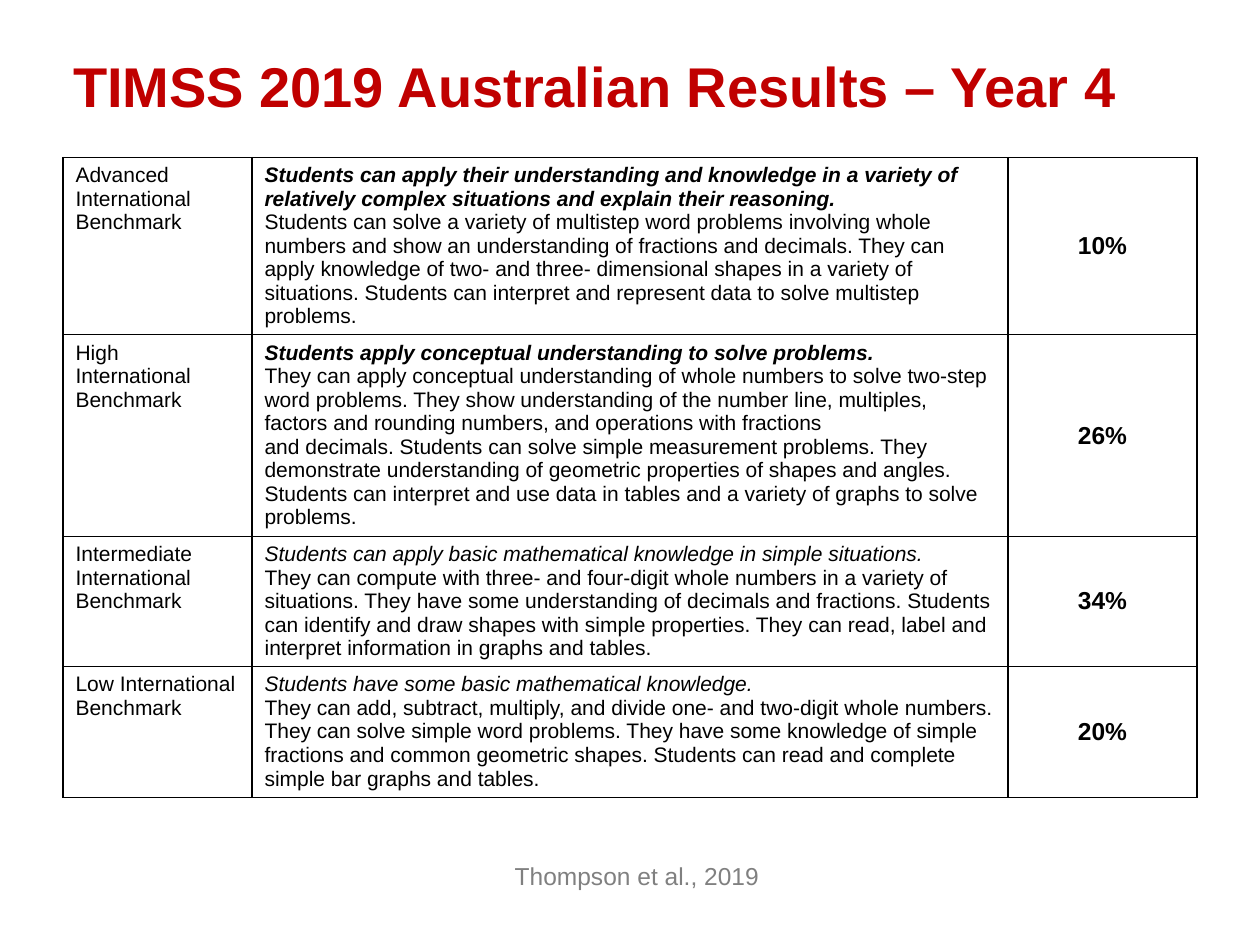
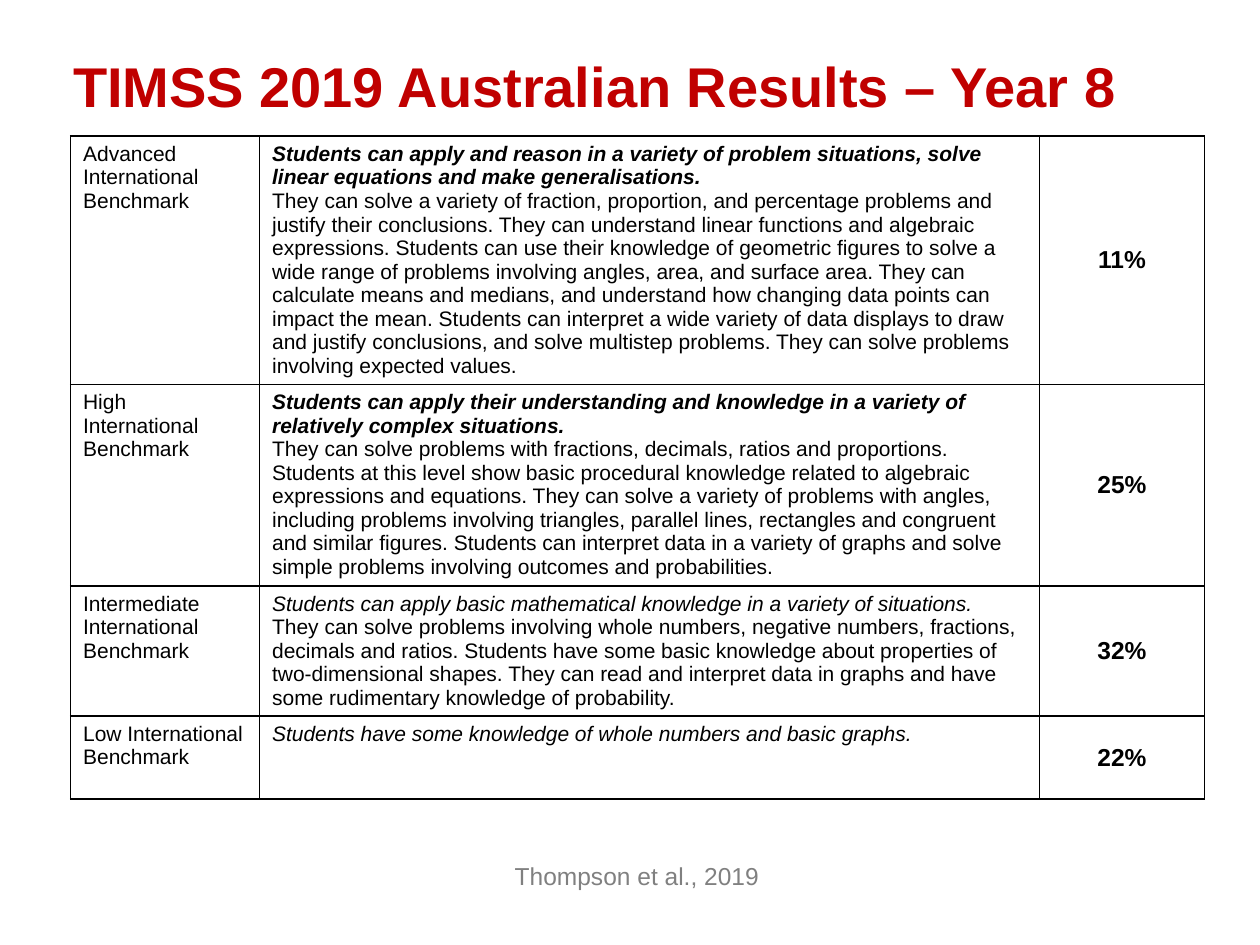
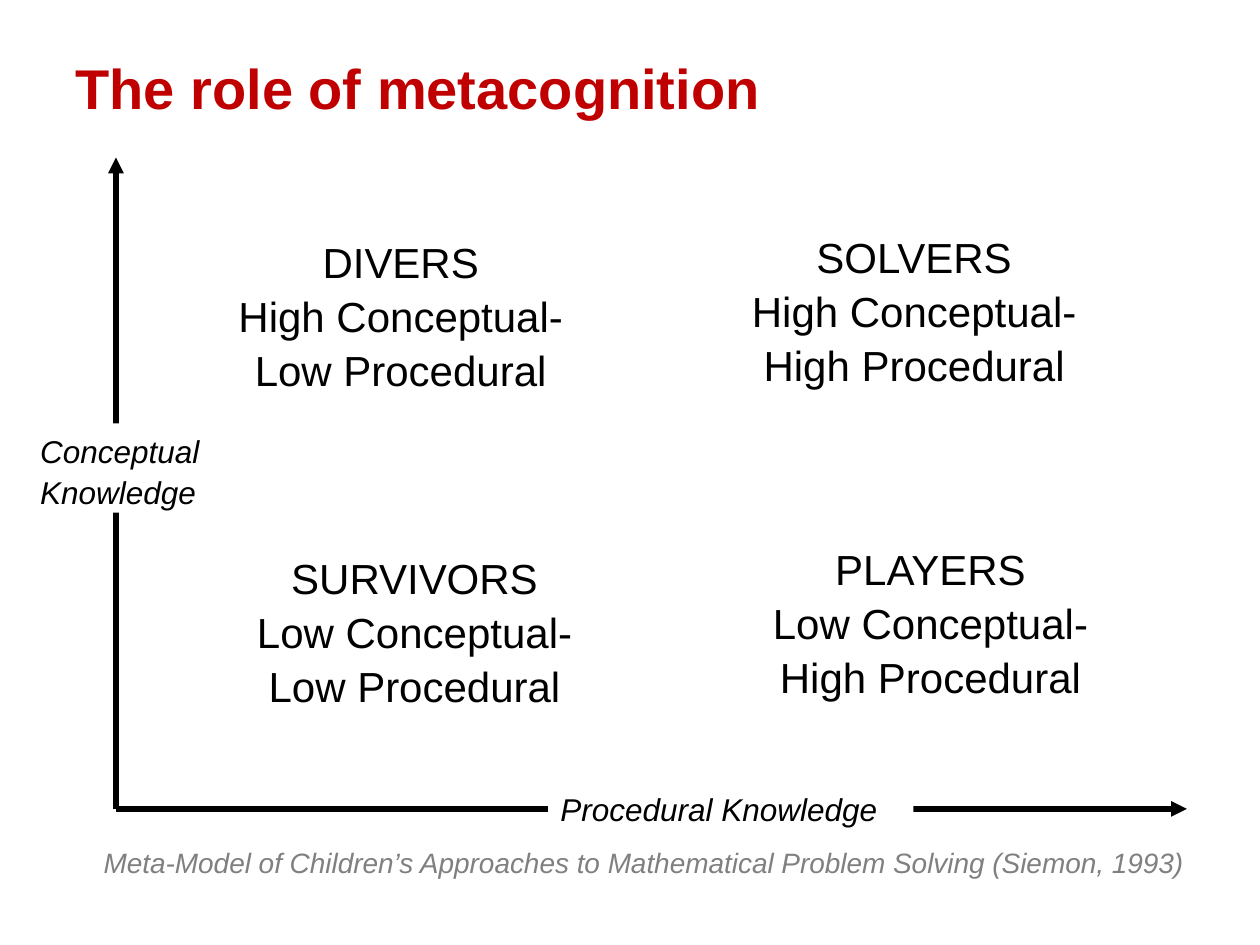
from lxml.etree import SubElement
from pptx import Presentation
from pptx.dml.color import RGBColor
from pptx.enum.shapes import MSO_CONNECTOR, MSO_SHAPE
from pptx.enum.text import MSO_ANCHOR, MSO_AUTO_SIZE, PP_ALIGN
from pptx.oxml.ns import qn
from pptx.util import Inches, Pt

COLORS = {"title": "C00000", "text": "000000", "source": "808080", "paper": "FFFFFF"}
FONT = "Arial"
LINE_SPACING = 1.07
BENCHMARKS = ["Advanced", "High", "Intermediate", "Low"]
SOURCE = "Thompson et al., 2019"

YEAR_4 = [
    (["Students can apply their understanding and knowledge in a variety of relatively complex situations and explain their reasoning.",
      "Students can solve a variety of multistep word problems involving whole numbers and show an understanding of fractions and decimals. They can apply knowledge of two- and three- dimensional shapes in a variety of situations. Students can interpret and represent data to solve multistep problems."],
     "10%"),
    (["Students apply conceptual understanding to solve problems.",
      "They can apply conceptual understanding of whole numbers to solve two-step word problems. They show understanding of the number line, multiples, factors and rounding numbers, and operations with fractions",
      "and decimals. Students can solve simple measurement problems. They demonstrate understanding of geometric properties of shapes and angles. Students can interpret and use data in tables and a variety of graphs to solve problems."],
     "26%"),
    (["Students can apply basic mathematical knowledge in simple situations.",
      "They can compute with three- and four-digit whole numbers in a variety of situations. They have some understanding of decimals and fractions. Students can identify and draw shapes with simple properties. They can read, label and interpret information in graphs and tables."],
     "34%"),
    (["Students have some basic mathematical knowledge.",
      "They can add, subtract, multiply, and divide one- and two-digit whole numbers. They can solve simple word problems. They have some knowledge of simple fractions and common geometric shapes. Students can read and complete simple bar graphs and tables."],
     "20%"),
]
YEAR_8 = [
    (["Students can apply and reason in a variety of problem situations, solve linear equations and make generalisations.",
      "They can solve a variety of fraction, proportion, and percentage problems and justify their conclusions. They can understand linear functions and algebraic expressions. Students can use their knowledge of geometric figures to solve a wide range of problems involving angles, area, and surface area. They can calculate means and medians, and understand how changing data points can impact the mean. Students can interpret a wide variety of data displays to draw and justify conclusions, and solve multistep problems. They can solve problems involving expected values."],
     "11%"),
    (["Students can apply their understanding and knowledge in a variety of relatively complex situations.",
      "They can solve problems with fractions, decimals, ratios and proportions. Students at this level show basic procedural knowledge related to algebraic expressions and equations. They can solve a variety of problems with angles, including problems involving triangles, parallel lines, rectangles and congruent",
      "and similar figures. Students can interpret data in a variety of graphs and solve simple problems involving outcomes and probabilities."],
     "25%"),
    (["Students can apply basic mathematical knowledge in a variety of situations.",
      "They can solve problems involving whole numbers, negative numbers, fractions, decimals and ratios. Students have some basic knowledge about properties of two-dimensional shapes. They can read and interpret data in graphs and have some rudimentary knowledge of probability."],
     "32%"),
    (["Students have some knowledge of whole numbers and basic graphs."], "22%"),
]
RESULTS = [
    ("Year 4", YEAR_4, (0.5, 1.25), (1.5, 6, 1.5), (1.4, 1.6, 1.03, 1.04)),
    ("Year 8", YEAR_8, (0.56, 1.08), (1.5, 6.19, 1.31), (1.97, 1.6, 1.03, 0.66)),
]
APPROACHES = [
    ("DIVERS", "High Conceptual-Low Procedural", (1.69, 1.8, 2.98, 1.48)),
    ("SURVIVORS", "Low Conceptual-Low Procedural", (1.8, 4.31, 2.98, 1.48)),
    ("PLAYERS", "Low Conceptual-High Procedural", (5.8, 4.24, 3.17, 1.48)),
    ("SOLVERS", "High Conceptual-High Procedural", (5.68, 1.76, 3.15, 1.48)),
]


def color(name):
    return RGBColor.from_string(COLORS[name])


def inches(values):
    return [Inches(value) for value in values]


class Deck:
    def __init__(self):
        self.presentation = Presentation()
        self.presentation.slide_width = Inches(10)
        self.presentation.slide_height = Inches(7.5)
        self.slide = None

    def add_slide(self, title, box):
        self.slide = self.presentation.slides.add_slide(self.presentation.slide_layouts[5])
        shape = self.slide.shapes.title
        shape.left, shape.top, shape.width, shape.height = inches(box)
        self.set_text(shape.text_frame, [title], 32, "title", bold=True)

    def style(self, paragraph, size, color_name="text", align=PP_ALIGN.LEFT, bold=False, italic=False):
        paragraph.alignment = align
        font = paragraph.font
        font.name, font.size, font.bold, font.italic = FONT, Pt(size), bold, italic
        font.color.rgb = color(color_name)

    def set_text(self, frame, lines, size, color_name="text", **options):
        frame.word_wrap = True
        frame.auto_size = MSO_AUTO_SIZE.NONE
        frame.vertical_anchor = MSO_ANCHOR.TOP
        frame.text = "\n".join(lines)
        for paragraph in frame.paragraphs:
            paragraph.line_spacing = LINE_SPACING
            self.style(paragraph, size, color_name, **options)

    def add_text(self, lines, box, size, color_name="text", italic=False):
        shape = self.slide.shapes.add_textbox(*inches(box))
        self.set_text(shape.text_frame, lines, size, color_name, align=PP_ALIGN.CENTER, italic=italic)

    def add_axis_label(self, text, box):
        shape = self.slide.shapes.add_shape(MSO_SHAPE.RECTANGLE, *inches(box))
        shape.shadow.inherit = False
        shape.fill.solid()
        shape.fill.fore_color.rgb = color("paper")
        shape.line.fill.background()
        self.set_text(shape.text_frame, [text], 18, italic=True)

    def add_arrow(self, start, end):
        connector = self.slide.shapes.add_connector(MSO_CONNECTOR.STRAIGHT, *inches(start + end))
        connector.line.color.rgb = color("text")
        connector.line.width = Pt(3)
        properties = connector._element.spPr
        SubElement(properties.find(qn("a:ln")), qn("a:tailEnd"), type="triangle")
        SubElement(properties, qn("a:effectLst"))

    def format_cell(self, cell):
        properties = cell._tc.get_or_add_tcPr()
        for edge in ("a:lnL", "a:lnR", "a:lnT", "a:lnB"):
            line = SubElement(properties, qn(edge), w=str(Pt(1)))
            fill = SubElement(line, qn("a:solidFill"))
            SubElement(fill, qn("a:srgbClr"), val=COLORS["text"])
        cell.fill.solid()
        cell.fill.fore_color.rgb = color("paper")

    def add_benchmark_table(self, results, position, widths, heights):
        box = inches(position + (sum(widths), sum(heights)))
        table = self.slide.shapes.add_table(len(results), len(widths), *box).table
        table.first_row = table.horz_banding = False
        for column, width in zip(table.columns, widths):
            column.width = Inches(width)
        for row, height in zip(table.rows, heights):
            row.height = Inches(height)
        for index, (benchmark, (lines, share)) in enumerate(zip(BENCHMARKS, results)):
            level, description, percentage = table.rows[index].cells
            for cell in (level, description, percentage):
                self.format_cell(cell)
            level.text = f"{benchmark} International Benchmark"
            self.style(level.text_frame.paragraphs[0], 12)
            description.text = "\n".join(lines)
            summary, *details = description.text_frame.paragraphs
            self.style(summary, 12, bold=index < 2, italic=True)
            for paragraph in details:
                self.style(paragraph, 12)
            percentage.text = share
            percentage.vertical_anchor = MSO_ANCHOR.MIDDLE
            self.style(percentage.text_frame.paragraphs[0], 14, align=PP_ALIGN.CENTER, bold=True)


def main():
    deck = Deck()
    for year, results, position, widths, heights in RESULTS:
        deck.add_slide(f"TIMSS 2019 Australian Results – {year}", (0.48, 0.32, 9.16, 0.64))
        deck.add_benchmark_table(results, position, widths, heights)
        deck.add_text([SOURCE], (2.39, 6.77, 5.33, 0.34), 14, "source")

    deck.add_slide("The role of metacognition", (0.5, 0.34, 5.75, 0.64))
    deck.add_text(["Meta-Model of Children’s Approaches to Mathematical Problem Solving (Siemon, 1993)"],
                  (0.32, 6.64, 9.58, 0.38), 16, "source", italic=True)
    origin = (0.92, 6.42)
    for end in ((9.42, 6.42), (0.92, 1.25)):
        deck.add_arrow(origin, end)
    deck.add_axis_label("Procedural Knowledge", (4.35, 6.2, 2.9, 0.4))
    deck.add_axis_label("Conceptual Knowledge", (0.22, 3.36, 1.58, 0.71))
    for name, profile, box in APPROACHES:
        deck.add_text([name, profile], box, 24)
    deck.presentation.save("out.pptx")


if __name__ == "__main__":
    main()
